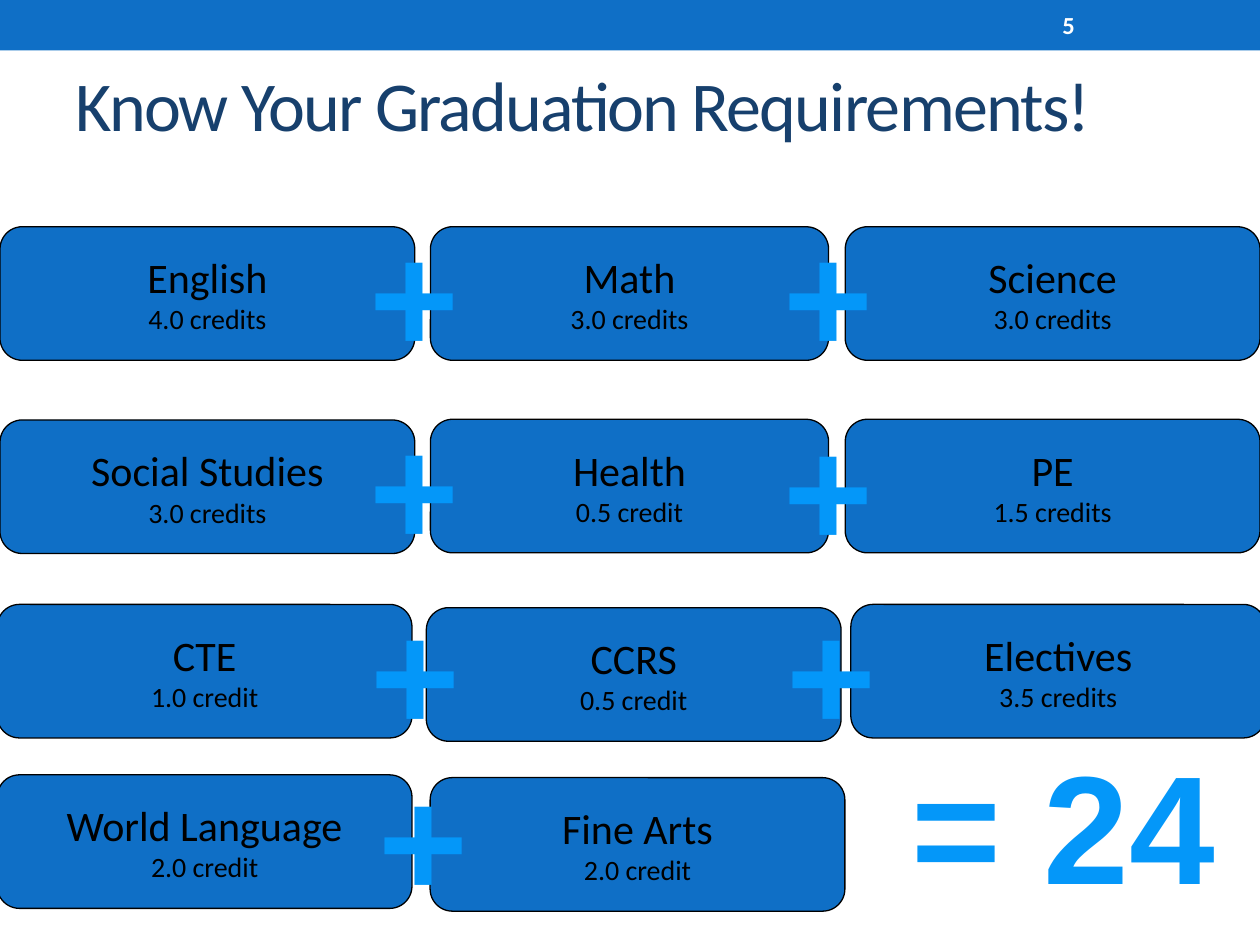
from dataclasses import dataclass

from pptx import Presentation
from pptx.dml.color import RGBColor
from pptx.enum.shapes import MSO_SHAPE
from pptx.enum.text import MSO_ANCHOR, MSO_AUTO_SIZE, PP_ALIGN
from pptx.util import Pt

RECT, ROUNDED = MSO_SHAPE.RECTANGLE, MSO_SHAPE.ROUNDED_RECTANGLE
LEFT, CENTER = PP_ALIGN.LEFT, PP_ALIGN.CENTER
TOP, MIDDLE = MSO_ANCHOR.TOP, MSO_ANCHOR.MIDDLE
NO_FIT, GROW = MSO_AUTO_SIZE.NONE, MSO_AUTO_SIZE.SHAPE_TO_FIT_TEXT


@dataclass(frozen=True)
class Theme:
    blue: str = "0F6FC6"
    navy: str = "17406D"
    bright: str = "0497F9"
    black: str = "000000"
    white: str = "FFFFFF"
    body_font: str = "Calibri"
    sign_font: str = "Arial"
    sign: int = 88
    title: int = 40
    subject: int = 24
    credits: int = 16
    number: int = 14


THEME = Theme()
TITLE = "Know Your Graduation Requirements!"
PAGE_NUMBER = "5"
TOTAL = "= 24"

# Each subject: name, credits, left, top, width
WIDE, NARROW, BOX_H = 237, 227.5, 76.3
SUBJECTS = [
    ("English", "4.0 credits", 0, 129.6, WIDE),
    ("Math", "3.0 credits", 246, 129.6, NARROW),
    ("Science", "3.0 credits", 483, 129.6, WIDE),
    ("Social Studies", "3.0 credits", 0, 240, WIDE),
    ("Health", "0.5 credit", 246, 239.6, NARROW),
    ("PE", "1.5 credits", 483, 239.6, WIDE),
    ("CTE", "1.0 credit", -1.6, 345.4, WIDE),
    ("CCRS", "0.5 credit", 243.6, 347.3, WIDE),
    ("Electives", "3.5 credits", 486.2, 345.4, WIDE),
    ("World Language", "2.0 credit", -1.6, 442.8, WIDE),
    ("Fine Arts", "2.0 credit", 245.8, 444.4, WIDE),
]

# Left and top of each plus sign
SIGN_W, SIGN_H = 66.2, 113.8
PLUSES = [
    (203.6, 110.6), (440.2, 110.6),
    (203.6, 220.6), (440.2, 221.3),
    (204.3, 326.3), (442.2, 326.3),
    (208.8, 421.2),
]


def write(shape, *lines, color=THEME.black, font=THEME.body_font, bold=False,
          align=LEFT, anchor=MIDDLE, wrap=True, fit=NO_FIT, inset=None, spacing=0):
    """Fill a shape with one paragraph for each (text, size) pair."""
    tf = shape.text_frame
    tf.auto_size, tf.word_wrap, tf.vertical_anchor = fit, wrap, anchor
    if inset is not None:
        tf.margin_left = tf.margin_top = tf.margin_right = tf.margin_bottom = Pt(inset)
    for i, (text, size) in enumerate(lines):
        p = tf.add_paragraph() if i else tf.paragraphs[0]
        p.alignment = align
        r = p.add_run()
        r.text = text
        r.font.name, r.font.size, r.font.bold = font, Pt(size), bold
        r.font.color.rgb = RGBColor.from_string(color)
        if spacing:
            r.font._element.set("spc", str(spacing * 100))


def add_block(slide, kind, box, line=None):
    sp = slide.shapes.add_shape(kind, *map(Pt, box))
    sp.shadow.inherit = False
    sp.fill.solid()
    sp.fill.fore_color.rgb = RGBColor.from_string(THEME.blue)
    if line:
        sp.line.color.rgb = RGBColor.from_string(line)
        sp.line.width = Pt(0.75)
    else:
        sp.line.fill.background()
    return sp


def add_text(slide, text, size, box, **fmt):
    write(slide.shapes.add_textbox(*map(Pt, box)), (text, size), **fmt)


def add_sign(slide, text, left, top, width):
    add_text(slide, text, THEME.sign, (left, top, width, SIGN_H),
             color=THEME.bright, font=THEME.sign_font, bold=True,
             align=CENTER, anchor=TOP, wrap=False, fit=GROW)


def main():
    prs = Presentation()
    prs.slide_width, prs.slide_height = Pt(720), Pt(540)
    s = prs.slides.add_slide(prs.slide_layouts[5])

    add_block(s, RECT, (0, 0, 720, 28.8))
    add_text(s, PAGE_NUMBER, THEME.number, (600, 1.4, 84, 26),
             color=THEME.white, bold=True)

    title = s.shapes.title
    title.left, title.top, title.width, title.height = map(Pt, (36, 8, 648, 102))
    write(title, (TITLE, THEME.title), color=THEME.navy, spacing=-1)

    for name, credits, left, top, width in SUBJECTS:
        sp = add_block(s, ROUNDED, (left, top, width, BOX_H), line=THEME.black)
        write(sp, (name, THEME.subject), (credits, THEME.credits),
              align=CENTER, wrap=False, inset=0)

    for left, top in PLUSES:
        add_sign(s, "+", left, top, SIGN_W)
    add_sign(s, TOTAL, 512.6, 414, 190)

    prs.save("out.pptx")


if __name__ == "__main__":
    main()
